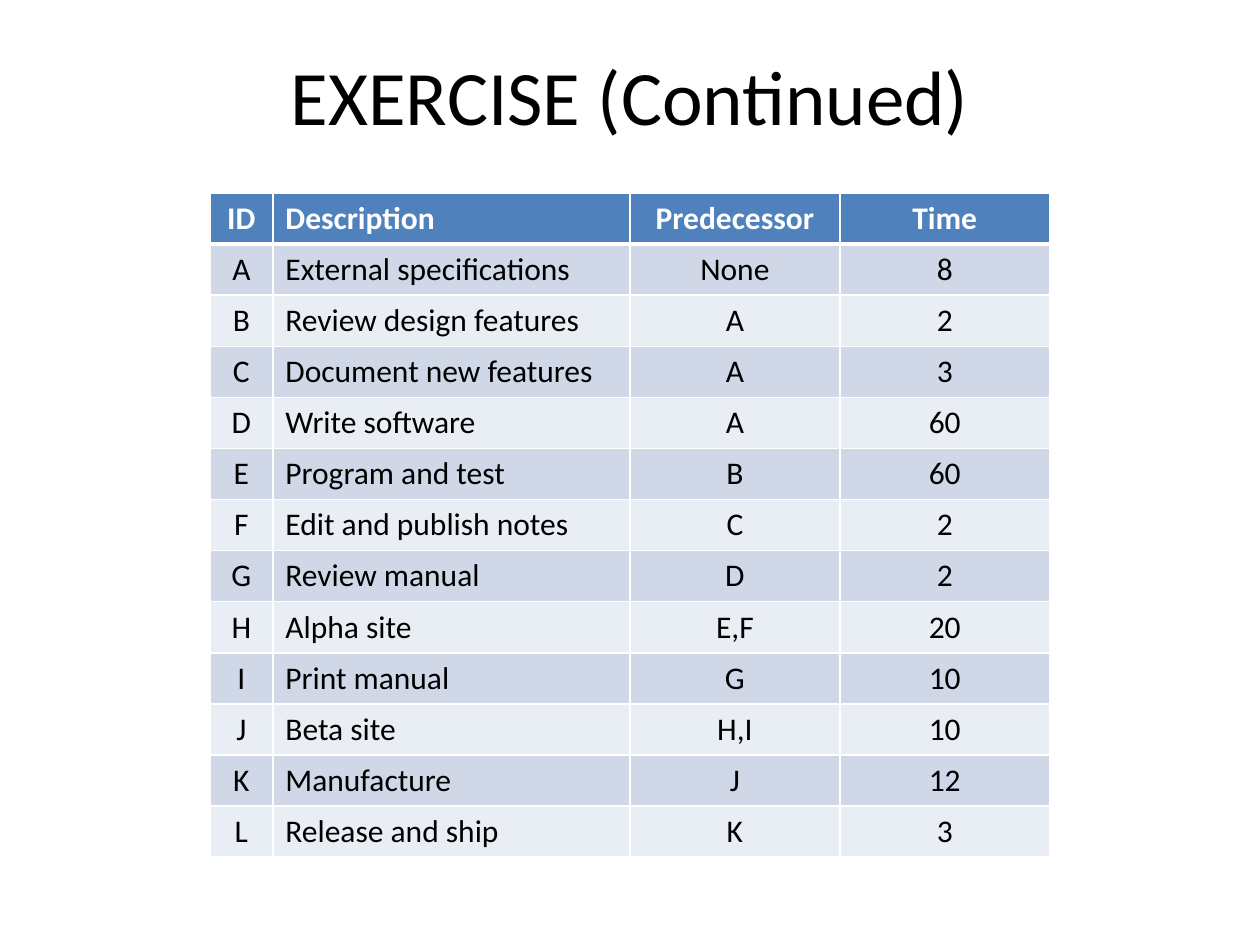
import pptx
import pptx.util
import pptx.dml.color
import pptx.enum.text
import pptx.oxml
import pptx.oxml.ns
from dataclasses import dataclass

Cm = pptx.util.Cm
Pt = pptx.util.Pt
RGB = pptx.dml.color.RGBColor.from_string
Align = pptx.enum.text.PP_ALIGN
Anchor = pptx.enum.text.MSO_ANCHOR


@dataclass
class Theme:
    font: str = "Calibri"
    ink: str = "000000"
    white: str = "FFFFFF"
    head: str = "4F81BD"
    bands: tuple = ("D0D8E8", "E9EDF4")
    title: int = 44
    body: int = 18
    line: int = 1
    rule: int = 3


theme = Theme()


def write(para, text, size, color, bold=False):
    run = para.add_run()
    run.text = text
    run.font.name = theme.font
    run.font.size = Pt(size)
    run.font.bold = bold
    run.font.color.rgb = RGB(color)


def edge(cell, side, width):
    """Draw one white border; call before the cell is filled."""
    cell._tc.get_or_add_tcPr().append(pptx.oxml.parse_xml(
        f'<a:{side} {pptx.oxml.ns.nsdecls("a")} w="{Pt(width)}">'
        f'<a:solidFill><a:srgbClr val="{theme.white}"/></a:solidFill>'
        f'</a:{side}>'))


deck = pptx.Presentation()
deck.slide_width = Cm(25.4)
deck.slide_height = Cm(19.05)
slide = deck.slides.add_slide(deck.slide_layouts[5])

title = slide.shapes.title
title.left, title.top = Cm(1.27), Cm(0.76)
title.width, title.height = Cm(22.86), Cm(3.18)
frame = title.text_frame
frame.vertical_anchor = Anchor.TOP
frame.margin_top = Cm(0.22)
frame.paragraphs[0].alignment = Align.CENTER
write(frame.paragraphs[0], "EXERCISE (Continued)", theme.title, theme.ink)

rows = [
    ("ID", "Description", "Predecessor", "Time"),
    ("A", "External specifications", "None", "8"),
    ("B", "Review design features", "A", "2"),
    ("C", "Document new features", "A", "3"),
    ("D", "Write software", "A", "60"),
    ("E", "Program and test", "B", "60"),
    ("F", "Edit and publish notes", "C", "2"),
    ("G", "Review manual", "D", "2"),
    ("H", "Alpha site", "E,F", "20"),
    ("I", "Print manual", "G", "10"),
    ("J", "Beta site", "H,I", "10"),
    ("K", "Manufacture", "J", "12"),
    ("L", "Release and ship", "K", "3"),
]
widths = [1.27, 7.2, 4.23, 4.23]
height = 1.03

table = slide.shapes.add_table(
    len(rows), len(widths), Cm(4.23), Cm(3.89),
    Cm(sum(widths)), Cm(height * len(rows))).table
for col, width in zip(table.columns, widths):
    col.width = Cm(width)

for r, texts in enumerate(rows):
    table.rows[r].height = Cm(height)
    head = r == 0
    fill = theme.head if head else theme.bands[(r - 1) % 2]
    for c, text in enumerate(texts):
        cell = table.cell(r, c)
        edge(cell, "lnL", theme.line)
        edge(cell, "lnR", theme.line)
        edge(cell, "lnT", theme.rule if r == 1 else theme.line)
        edge(cell, "lnB", theme.rule if head else theme.line)
        cell.fill.solid()
        cell.fill.fore_color.rgb = RGB(fill)
        para = cell.text_frame.paragraphs[0]
        para.alignment = Align.LEFT if c == 1 else Align.CENTER
        write(para, text, theme.body, theme.white if head else theme.ink, head)

deck.save("out.pptx")
